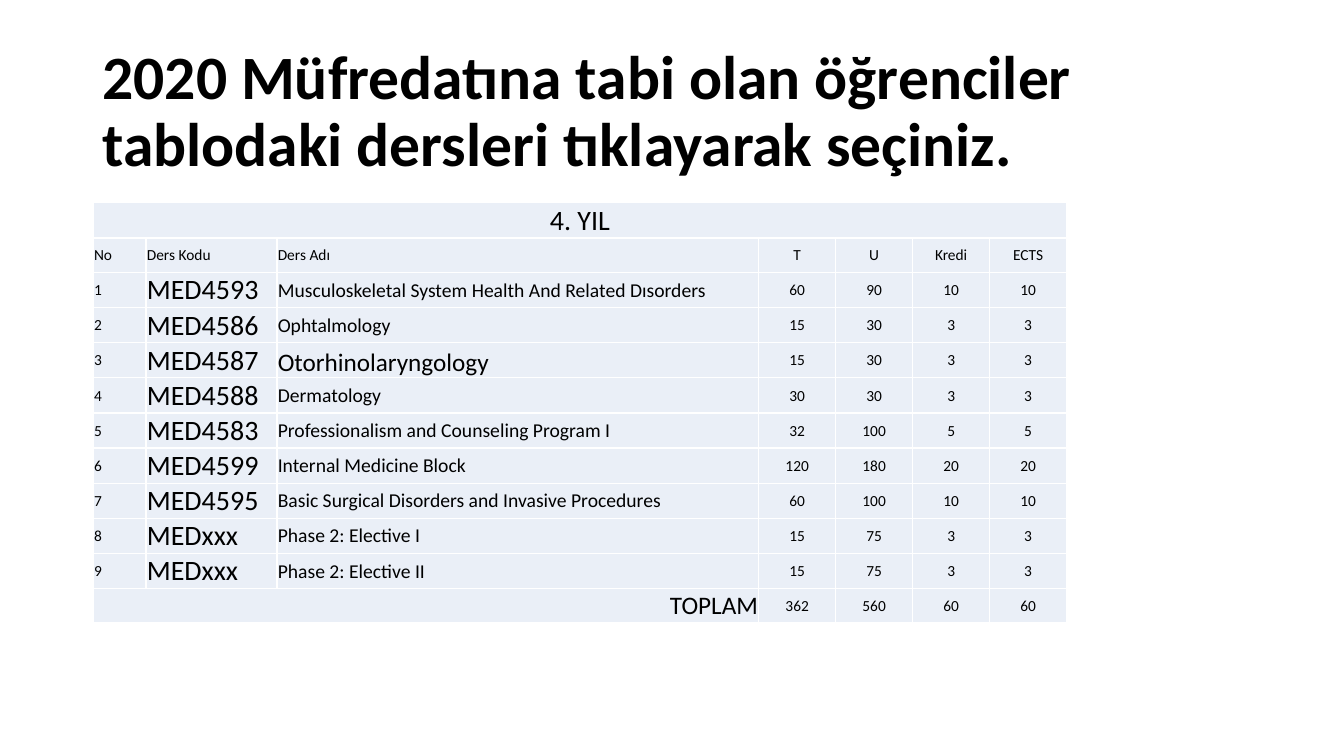
"""Build the fourth-year course selection slide with its curriculum table."""
from pptx import Presentation
from pptx import util as u
from pptx.dml.color import RGBColor
from pptx.enum import text
from pptx.oxml import parse_xml
from pptx.oxml.ns import nsdecls

BLACK = RGBColor(0x00, 0x00, 0x00)
WHITE = RGBColor(0xFF, 0xFF, 0xFF)
PALE_BLUE = RGBColor(0xEA, 0xEF, 0xF7)
FONT = "Calibri"
LEFT, CENTER, RIGHT = text.PP_ALIGN.LEFT, text.PP_ALIGN.CENTER, text.PP_ALIGN.RIGHT
MIDDLE, BOTTOM = text.MSO_ANCHOR.MIDDLE, text.MSO_ANCHOR.BOTTOM

HEADING = "2020 Müfredatına tabi olan öğrenciler tablodaki dersleri tıklayarak seçiniz."
YEAR = "4. YIL"
HEADERS = ["No", "Ders Kodu", "Ders Adı", "T", "U", "Kredi", "ECTS"]
COURSES = [
    ("MED4593", "Musculoskeletal System Health And Related Dısorders", 60, 90, 10, 10),
    ("MED4586", "Ophtalmology", 15, 30, 3, 3),
    ("MED4587", "Otorhinolaryngology", 15, 30, 3, 3),
    ("MED4588", "Dermatology", 30, 30, 3, 3),
    ("MED4583", "Professionalism and Counseling Program I", 32, 100, 5, 5),
    ("MED4599", "Internal Medicine Block", 120, 180, 20, 20),
    ("MED4595", "Basic Surgical Disorders and Invasive Procedures", 60, 100, 10, 10),
    ("MEDxxx", "Phase 2: Elective I", 15, 75, 3, 3),
    ("MEDxxx", "Phase 2: Elective II", 15, 75, 3, 3),
]
TOTALS = ["TOPLAM", None, None, 362, 560, 60, 60]
COLUMN_WIDTHS = [1.33, 3.3, 12.14] + [1.94] * 4
ROW_HEIGHT = 0.87
COURSE_SIZES = [11, 20, 14] + [11] * 4
ALIGNMENTS = [LEFT] * 3 + [CENTER] * 4
SPECIAL_SIZES = {YEAR: 20, "Otorhinolaryngology": 18, "TOPLAM": 18}
SPECIAL_ALIGNMENTS = {YEAR: CENTER, "TOPLAM": RIGHT}
SPECIAL_ANCHORS = {"Otorhinolaryngology": BOTTOM}

TITLE_PLACE = {"left": u.Cm(2.33), "top": u.Cm(1.01), "width": u.Cm(29.21), "height": u.Cm(3.68)}
TITLE_FRAME = {"word_wrap": True, "auto_size": text.MSO_AUTO_SIZE.NONE, "vertical_anchor": MIDDLE}
TITLE_FONT = {"name": FONT, "size": u.Pt(44), "bold": True}
CELL_MARGINS = {"margin_left": u.Cm(0.02), "margin_right": u.Cm(0.02),
                "margin_top": u.Cm(0.02), "margin_bottom": 0}
PLAIN_TABLE = {"first_row": False, "horz_banding": False}


def apply(target, formats):
    """Set each named attribute of the target."""
    for name, value in formats.items():
        setattr(target, name, value)


def write(paragraph, words, alignment, font):
    """Put formatted black words in a paragraph."""
    paragraph.alignment = alignment
    run = paragraph.add_run()
    run.text = words
    apply(run.font, font)
    run.font.color.rgb = BLACK


def add_heading(slide):
    """Place and fill the slide title."""
    heading = slide.shapes.title
    apply(heading, TITLE_PLACE)
    apply(heading.text_frame, TITLE_FRAME)
    paragraph = heading.text_frame.paragraphs[0]
    paragraph.line_spacing = 0.9
    write(paragraph, HEADING, LEFT, TITLE_FONT)


def add_borders(cell):
    """Draw thin white lines on the four sides of a cell."""
    properties = cell._tc.get_or_add_tcPr()
    for side in "LRTB":
        properties.append(parse_xml(
            f'<a:ln{side} {nsdecls("a")} w="{u.Pt(1)}"><a:solidFill>'
            f'<a:srgbClr val="{WHITE}"/></a:solidFill></a:ln{side}>'))


def fill_cell(cell, value, size, alignment):
    """Format a table cell and write its value."""
    apply(cell, CELL_MARGINS)
    cell.vertical_anchor = SPECIAL_ANCHORS.get(value, MIDDLE)
    add_borders(cell)
    cell.fill.solid()
    cell.fill.fore_color.rgb = PALE_BLUE
    if value is not None:
        font = {"name": FONT, "size": u.Pt(SPECIAL_SIZES.get(value, size))}
        write(cell.text_frame.paragraphs[0], str(value),
              SPECIAL_ALIGNMENTS.get(value, alignment), font)


def add_curriculum(slide):
    """Add the table of courses with its year row and totals row."""
    numbered = [[number, *course] for number, course in enumerate(COURSES, 1)]
    rows = [[YEAR] + [None] * 6, HEADERS, *numbered, TOTALS]
    curriculum = slide.shapes.add_table(
        len(rows), len(HEADERS), u.Cm(2.35), u.Cm(5.11),
        u.Cm(sum(COLUMN_WIDTHS)), u.Cm(ROW_HEIGHT * len(rows))).table
    apply(curriculum, PLAIN_TABLE)
    for column, width in zip(curriculum.columns, COLUMN_WIDTHS):
        column.width = u.Cm(width)
    for index, values in enumerate(rows):
        curriculum.rows[index].height = u.Cm(ROW_HEIGHT)
        sizes = COURSE_SIZES if values in numbered else [11] * len(HEADERS)
        for place, (value, size, alignment) in enumerate(zip(values, sizes, ALIGNMENTS)):
            fill_cell(curriculum.cell(index, place), value, size, alignment)
    last = len(rows) - 1
    curriculum.cell(0, 0).merge(curriculum.cell(0, len(HEADERS) - 1))
    curriculum.cell(last, 0).merge(curriculum.cell(last, 2))


def main():
    """Create the presentation and save it."""
    deck = Presentation()
    apply(deck, {"slide_width": u.Cm(33.87), "slide_height": u.Cm(19.05)})
    slide = deck.slides.add_slide(deck.slide_layouts.get_by_name("Title Only"))
    add_heading(slide)
    add_curriculum(slide)
    deck.save("out.pptx")


if __name__ == "__main__":
    main()
